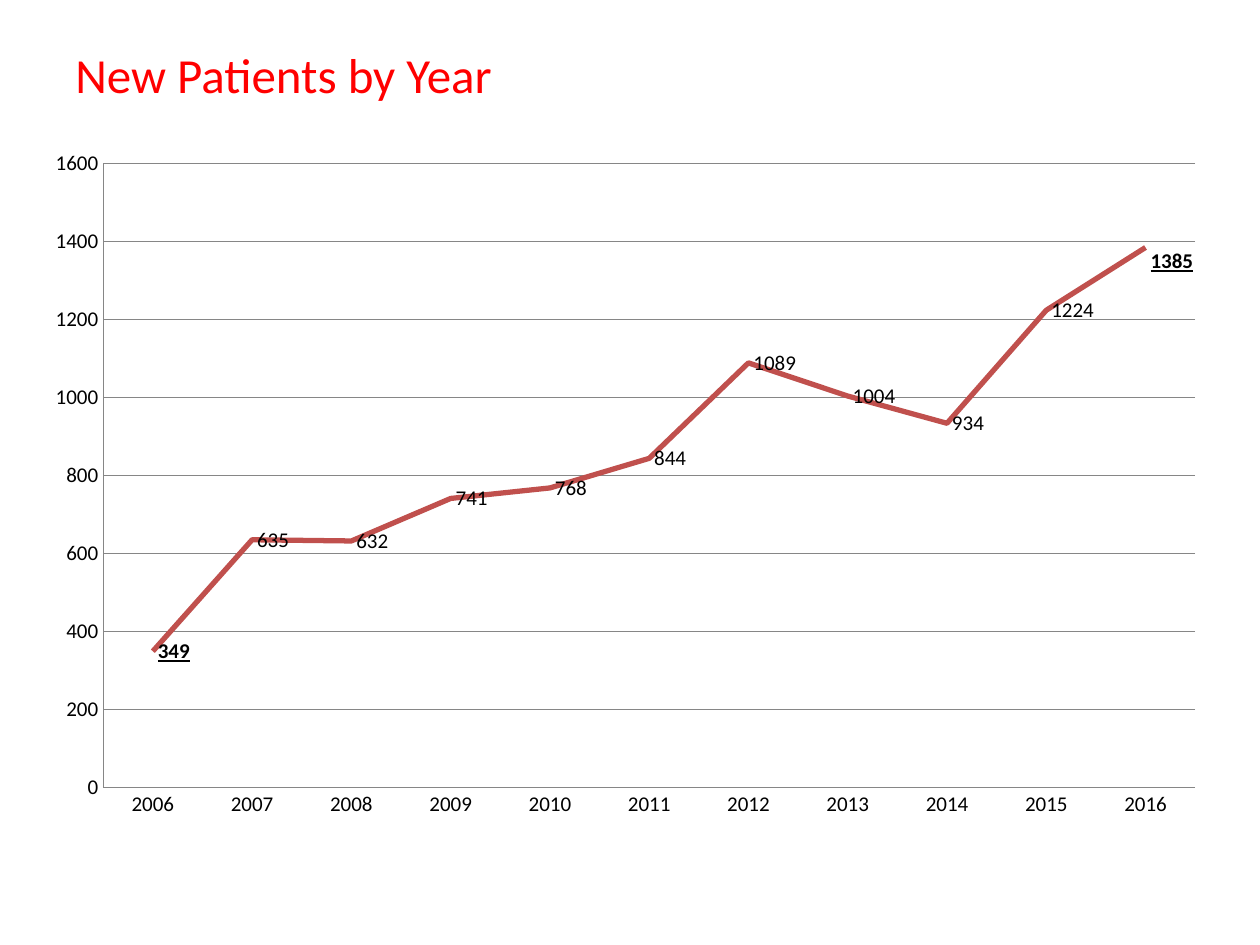
from pptx import Presentation
from pptx.chart.data import CategoryChartData
from pptx.dml.color import RGBColor
from pptx.enum.chart import XL_CHART_TYPE, XL_LABEL_POSITION, XL_MARKER_STYLE, XL_TICK_MARK
from pptx.oxml import parse_xml
from pptx.oxml.ns import nsdecls, qn
from pptx.util import Emu, Pt

PX_PER_INCH = 126
FONT = "Calibri"
RED = RGBColor(0xFF, 0x00, 0x00)
BLACK = RGBColor(0x00, 0x00, 0x00)
BRICK = RGBColor(0xC0, 0x50, 0x4D)
GRAY = RGBColor(0x86, 0x86, 0x86)

YEARS = [str(year) for year in range(2006, 2017)]
NEW_PATIENTS = [349, 635, 632, 741, 768, 844, 1089, 1004, 934, 1224, 1385]


def px(length):
    return Emu(round(length * 914400 / PX_PER_INCH))


def style_font(font, size, color):
    font.name = FONT
    font.size = Pt(size)
    font.color.rgb = color


def style_line(line, width, color):
    line.width = Pt(width)
    line.color.rgb = color


def make_layout(modes, **fractions):
    """Return a manual chart layout; fractions are parts of the chart size."""
    settings = {**modes, **fractions}
    items = "".join(f'<c:{name} val="{value}"/>' for name, value in settings.items())
    return parse_xml(
        f'<c:layout {nsdecls("c")}><c:manualLayout>{items}</c:manualLayout></c:layout>'
    )


def add_title(slide, text, left, top, width, height):
    box = slide.shapes.add_textbox(px(left), px(top), px(width), px(height))
    box.text_frame.word_wrap = True
    box.text_frame.text = text
    style_font(box.text_frame.paragraphs[0].runs[0].font, 28, RED)


def style_axes(chart):
    value_axis = chart.value_axis
    value_axis.minimum_scale = 0
    value_axis.maximum_scale = 1600
    value_axis.major_unit = 200
    value_axis.tick_labels.number_format = "0"
    value_axis.tick_labels.number_format_is_linked = False
    value_axis.has_major_gridlines = True
    style_line(value_axis.major_gridlines.format.line, 0.75, GRAY)
    for axis in (chart.category_axis, value_axis):
        axis.major_tick_mark = XL_TICK_MARK.NONE
        axis.minor_tick_mark = XL_TICK_MARK.NONE
        style_line(axis.format.line, 0.75, GRAY)


def add_labels(series):
    """Label every point, with the first and last year emphasised."""
    labels = series.data_labels
    labels.show_value = True
    labels.position = XL_LABEL_POSITION.RIGHT
    style_font(labels.font, 12, BLACK)
    for index in (0, len(YEARS) - 1):
        label = series.points[index].data_label
        style_font(label.font, 12, BLACK)
        label.font.bold = True
        label.font.underline = True
        label.position = XL_LABEL_POSITION.RIGHT
    last_label = labels._element.findall(qn("c:dLbl"))[-1]
    last_label.find(qn("c:idx")).addnext(make_layout({}, x=0, y=0.02))


def add_line_chart(slide, left, top, width, height):
    data = CategoryChartData(number_format="0")
    data.categories = YEARS
    data.add_series("Series 1", NEW_PATIENTS)
    chart = slide.shapes.add_chart(
        XL_CHART_TYPE.LINE, px(left), px(top), px(width), px(height), data
    ).chart
    chart.has_title = False
    chart.has_legend = False
    style_font(chart.font, 12, BLACK)
    style_axes(chart)

    plot = chart.plots[0]
    plot.vary_by_categories = False
    series = plot.series[0]
    series.smooth = False
    series.marker.style = XL_MARKER_STYLE.NONE
    style_line(series.format.line, 3, BRICK)
    add_labels(series)

    plot_area = chart._chartSpace.chart.plotArea
    for layout in plot_area.findall(qn("c:layout")):
        plot_area.remove(layout)
    modes = {"layoutTarget": "inner", "xMode": "edge", "yMode": "edge"}
    plot_area.insert(0, make_layout(modes, x=0.06, y=0.04, w=0.92, h=0.9))


def main():
    presentation = Presentation()
    presentation.slide_width = px(1260)
    presentation.slide_height = px(945)
    slide = presentation.slides.add_slide(presentation.slide_layouts[6])
    add_title(slide, "New Patients by Year", 63, 38, 1134, 158)
    add_line_chart(slide, 32, 136, 1187, 693)
    presentation.save("out.pptx")


if __name__ == "__main__":
    main()
